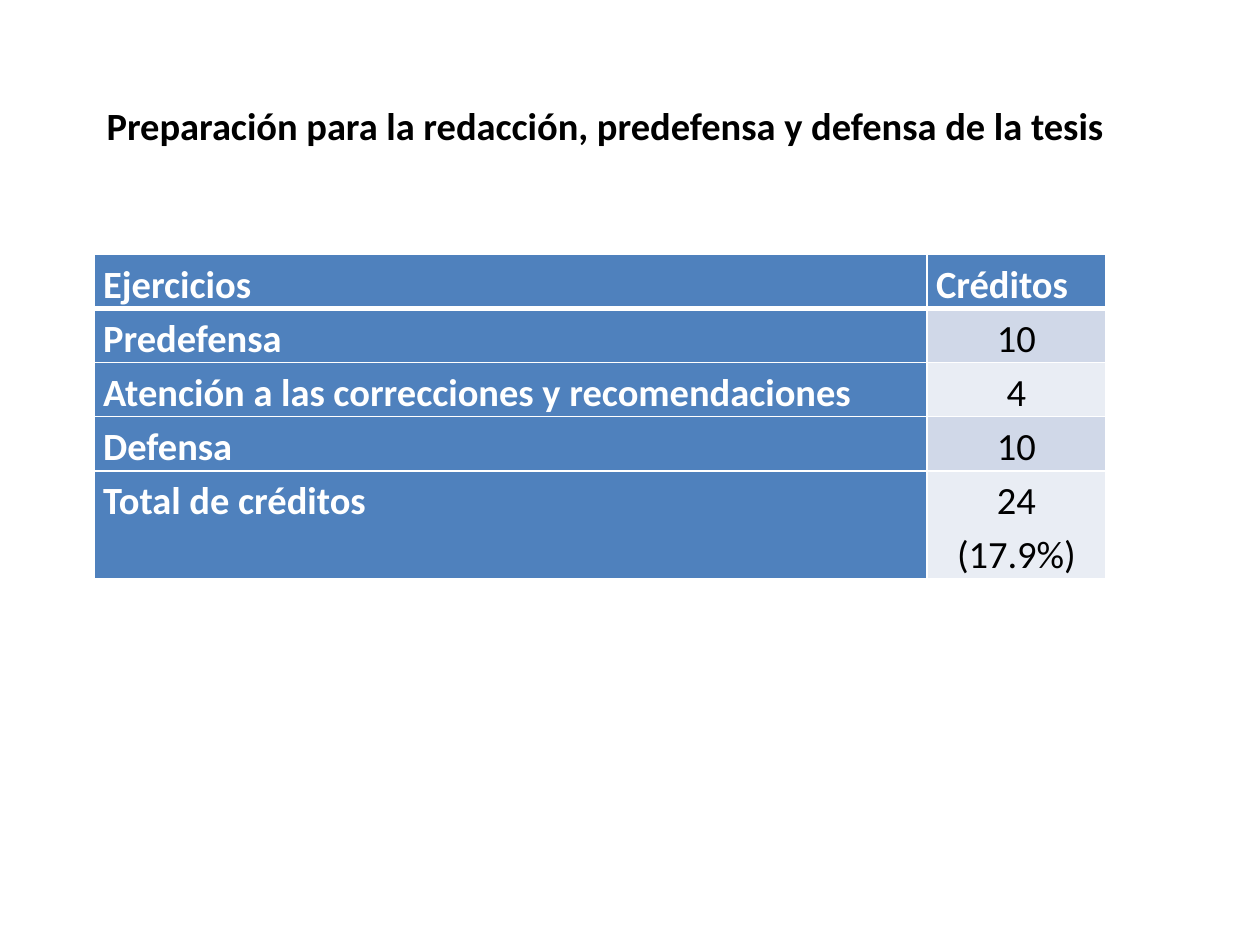
from lxml import etree
from pptx import Presentation
from pptx import util as u
from pptx.dml.color import RGBColor
from pptx.enum import text
from pptx.oxml.ns import qn

WHITE, BLACK, BLUE = "FFFFFF", "000000", "4F81BD"
BANDS = ("D0D8E8", "E9EDF4")
ROWS = [
    ("Ejercicios", "Créditos"),
    ("Predefensa", "10"),
    ("Atención a las correcciones y recomendaciones ", "4"),
    ("Defensa ", "10"),
    ("Total de créditos", "24 (17.9%)"),
]
COL_WIDTHS = (16.79, 3.6)
ROW_HEIGHT = 1.09


def color(value):
    return RGBColor.from_string(value)


def set_attrs(obj, values):
    for name, value in values.items():
        setattr(obj, name, value)


def write(tf, words, font_color, bold):
    p = tf.paragraphs[0]
    r = p.add_run()
    r.text = words
    set_attrs(r.font, {"name": "Calibri", "size": u.Pt(22), "bold": bold})
    r.font.color.rgb = color(font_color)
    return p


def add_title(s, words):
    sp = s.shapes.add_textbox(u.Cm(1.9), u.Cm(1.93), u.Cm(20.85), u.Cm(1.19))
    tf = sp.text_frame
    set_attrs(tf, {"word_wrap": False,
                   "vertical_anchor": text.MSO_ANCHOR.MIDDLE,
                   "auto_size": text.MSO_AUTO_SIZE.SHAPE_TO_FIT_TEXT})
    write(tf, words, BLACK, True)


def set_borders(cell, bottom):
    tc_pr = cell._tc.get_or_add_tcPr()
    for side, width in (("L", 1), ("R", 1), ("T", 1), ("B", bottom)):
        ln = etree.SubElement(tc_pr, qn(f"a:ln{side}"), w=str(u.Pt(width)))
        fill = etree.SubElement(ln, qn("a:solidFill"))
        etree.SubElement(fill, qn("a:srgbClr"), val=WHITE)


def fill_cell(cell, words, row, col):
    is_label = row == 0 or col == 0
    set_attrs(cell, {"margin_left": u.Cm(0.18), "margin_right": u.Cm(0.18),
                     "margin_top": 0, "margin_bottom": 0})
    set_borders(cell, 3 if row == 0 else 1)
    cell.fill.solid()
    cell.fill.fore_color.rgb = color(BLUE if is_label else BANDS[(row - 1) % 2])
    p = write(cell.text_frame, words, WHITE if is_label else BLACK, is_label)
    align = text.PP_ALIGN.JUSTIFY if is_label else text.PP_ALIGN.CENTER
    set_attrs(p, {"alignment": align, "line_spacing": 1.15})


def add_credits_table(s):
    # The total takes two lines, so the last row is twice as high
    heights = [ROW_HEIGHT] * (len(ROWS) - 1) + [2 * ROW_HEIGHT]
    table = s.shapes.add_table(len(ROWS), len(COL_WIDTHS), u.Cm(1.9), u.Cm(5.13),
                               u.Cm(sum(COL_WIDTHS)), u.Cm(sum(heights))).table
    for column, width in zip(table.columns, COL_WIDTHS):
        column.width = u.Cm(width)
    for i, (height, words) in enumerate(zip(heights, ROWS)):
        table.rows[i].height = u.Cm(height)
        for j, word in enumerate(words):
            fill_cell(table.cell(i, j), word, i, j)


def main():
    prs = Presentation()
    set_attrs(prs, {"slide_width": u.Cm(25.4), "slide_height": u.Cm(19.05)})
    s = prs.slides.add_slide(prs.slide_layouts[6])

    # Credits per exercise
    add_credits_table(s)

    # Heading
    add_title(s, "Preparación para la redacción, predefensa y defensa de la tesis")

    prs.save("out.pptx")


if __name__ == "__main__":
    main()
